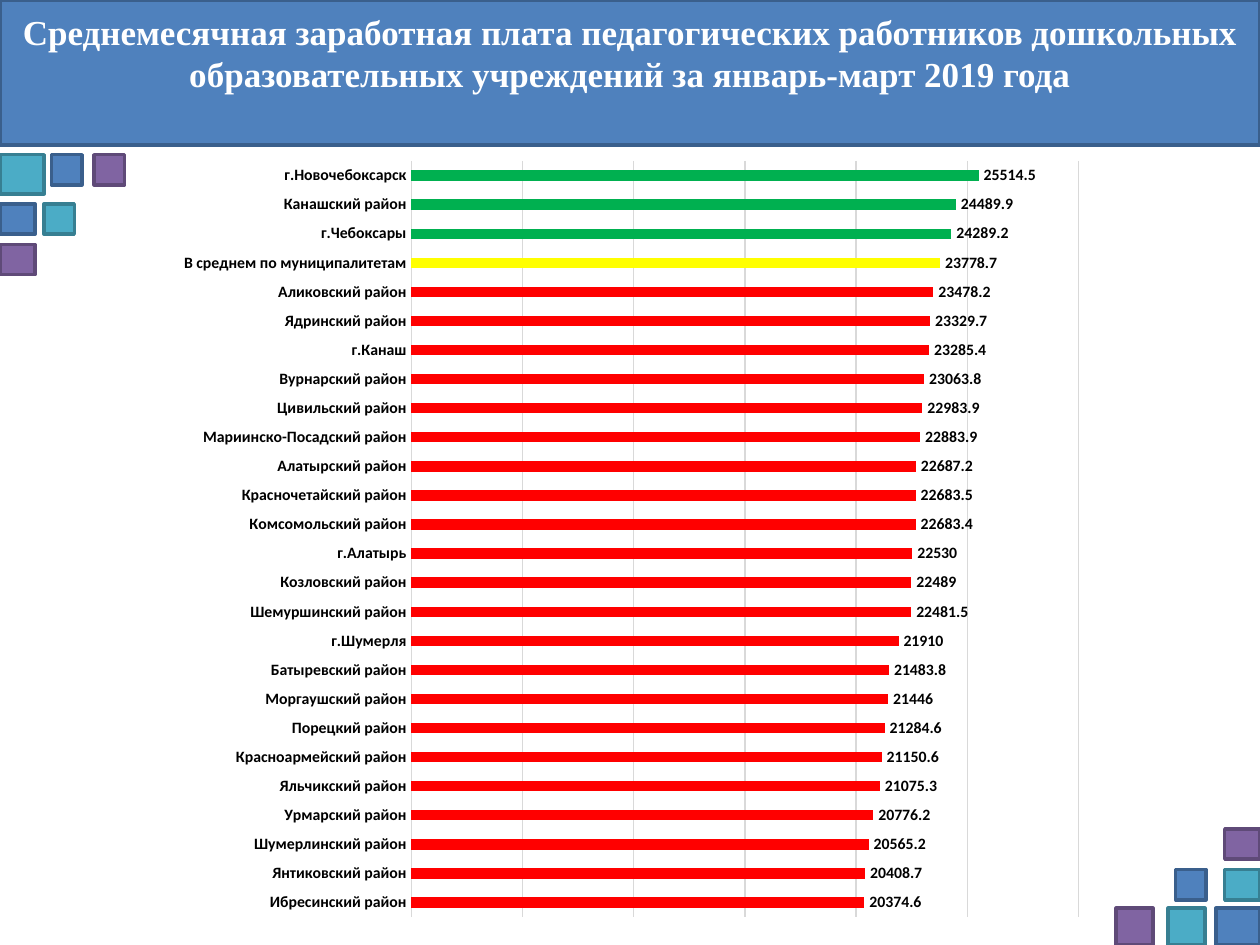
from dataclasses import dataclass

from lxml.etree import SubElement
from pptx import Presentation
from pptx.chart.data import CategoryChartData as Data
from pptx.dml.color import RGBColor as Rgb
from pptx.enum.chart import XL_CHART_TYPE as Kind
from pptx.enum.chart import XL_LABEL_POSITION as Spot
from pptx.enum.chart import XL_TICK_MARK as Tick
from pptx.enum.shapes import MSO_SHAPE as Form
from pptx.enum.text import MSO_ANCHOR as Anchor
from pptx.enum.text import PP_ALIGN as Align
from pptx.oxml.ns import qn
from pptx.util import Cm, Pt


@dataclass(frozen=True)
class Theme:
    blue: tuple = ("4F81BD", "3A5F8C")  # fill, line
    teal: tuple = ("4BACC6", "377F92")
    plum: tuple = ("8064A2", "5F4A78")
    high: str = "00B050"
    mean: str = "FFFF00"
    low: str = "FF0000"
    grid: str = "D9D9D9"
    ink: str = "000000"
    white: str = "FFFFFF"
    serif: str = "Times New Roman"
    sans: str = "Calibri"
    head: int = 20
    body: int = 10
    small: int = 9
    edge: float = 2
    thin: float = 0.75


T = Theme()

TITLE = ("Среднемесячная заработная плата педагогических работников "
         "дошкольных образовательных учреждений за январь-март 2019 года")
MEAN = "В среднем по муниципалитетам"

PAY = {
    "г.Новочебоксарск": 25514.5,
    "Канашский район": 24489.9,
    "г.Чебоксары": 24289.2,
    MEAN: 23778.7,
    "Аликовский район": 23478.2,
    "Ядринский район": 23329.7,
    "г.Канаш": 23285.4,
    "Вурнарский район": 23063.8,
    "Цивильский район": 22983.9,
    "Мариинско-Посадский район": 22883.9,
    "Алатырский район": 22687.2,
    "Красночетайский район": 22683.5,
    "Комсомольский район": 22683.4,
    "г.Алатырь": 22530,
    "Козловский район": 22489,
    "Шемуршинский район": 22481.5,
    "г.Шумерля": 21910,
    "Батыревский район": 21483.8,
    "Моргаушский район": 21446,
    "Порецкий район": 21284.6,
    "Красноармейский район": 21150.6,
    "Яльчикский район": 21075.3,
    "Урмарский район": 20776.2,
    "Шумерлинский район": 20565.2,
    "Янтиковский район": 20408.7,
    "Ибресинский район": 20374.6,
}

# Corner tiles by row: top, height, then (left, width, colour pair)
TILES = [
    (3.12, 0.61, [(1.04, 0.61, T.blue), (1.9, 0.61, T.plum)]),
    (3.12, 0.79, [(0, 0.89, T.teal)]),
    (4.11, 0.61, [(0, 0.71, T.blue), (0.89, 0.61, T.teal)]),
    (4.93, 0.61, [(0, 0.71, T.plum)]),
    (16.71, 0.61, [(24.69, 0.71, T.plum)]),
    (17.53, 0.61, [(23.7, 0.61, T.blue), (24.69, 0.71, T.teal)]),
    (18.31, 0.74, [(22.5, 0.74, T.plum), (23.55, 0.74, T.teal),
                   (24.51, 0.89, T.blue)]),
]


def tint(code):
    return Rgb.from_string(code)


def style(obj, opts):
    for key, val in opts.items():
        setattr(obj, key, val)


def type_set(font, name, size, code, bold):
    style(font, {"name": name, "size": Pt(size), "bold": bold})
    font.color.rgb = tint(code)


def stroke(line, code, width):
    line.color.rgb = tint(code)
    line.width = Pt(width)


def box(slide, left, top, width, height, pair):
    shape = slide.shapes.add_shape(
        Form.RECTANGLE, Cm(left), Cm(top), Cm(width), Cm(height))
    shape.shadow.inherit = False
    shape.fill.solid()
    shape.fill.fore_color.rgb = tint(pair[0])
    stroke(shape.line, pair[1], T.edge)
    return shape


def banner(slide):
    frame = box(slide, 0, 0, 25.4, 2.92, T.blue).text_frame
    style(frame, {"word_wrap": True, "vertical_anchor": Anchor.TOP,
                  "margin_top": Cm(0.21)})
    para = frame.paragraphs[0]
    para.alignment = Align.CENTER
    run = para.add_run()
    run.text = TITLE
    type_set(run.font, T.serif, T.head, T.white, True)


def place(chart, left, top, width, height):
    """Pin the inner plot area, in fractions of the chart."""
    area = chart.plots[0]._element.getparent()
    old = area.find(qn("c:layout"))
    if old is not None:
        area.remove(old)
    lay = SubElement(area, qn("c:layout"))
    area.insert(0, lay)
    man = SubElement(lay, qn("c:manualLayout"))
    parts = {"layoutTarget": "inner", "xMode": "edge", "yMode": "edge",
             "x": left, "y": top, "w": width, "h": height}
    for key, val in parts.items():
        SubElement(man, qn("c:" + key)).set("val", str(val))


def axes(chart):
    cat, val = chart.category_axis, chart.value_axis
    style(cat, {"reverse_order": True, "major_tick_mark": Tick.NONE,
                "minor_tick_mark": Tick.NONE, "has_major_gridlines": False})
    type_set(cat.tick_labels.font, T.sans, T.small, T.ink, True)
    stroke(cat.format.line, T.grid, T.thin)
    style(val, {"minimum_scale": 0, "maximum_scale": 30000,
                "major_unit": 5000, "has_major_gridlines": True,
                "visible": False})
    stroke(val.major_gridlines.format.line, T.grid, T.thin)


def bars(slide):
    data = Data(number_format="General")
    data.categories = list(PAY)
    data.add_series("Series 1", list(PAY.values()))
    chart = slide.shapes.add_chart(
        Kind.BAR_CLUSTERED, Cm(2.39), Cm(2.57), Cm(19.81), Cm(16.13),
        data).chart
    style(chart, {"has_legend": False, "has_title": False})
    type_set(chart.font, T.sans, T.body, T.ink, False)
    axes(chart)
    place(chart, 0.298, 0.042, 0.679, 0.945)

    # Bars are coloured by their standing against the mean
    plot = chart.plots[0]
    style(plot, {"gap_width": 182, "vary_by_categories": False,
                 "has_data_labels": True})
    row = plot.series[0]
    row.format.fill.solid()
    row.format.fill.fore_color.rgb = tint(T.blue[0])
    for num, pay in enumerate(PAY.values()):
        code = (T.high if pay > PAY[MEAN] else
                T.low if pay < PAY[MEAN] else T.mean)
        fill = row.points[num].format.fill
        fill.solid()
        fill.fore_color.rgb = tint(code)

    # Value labels
    tags = plot.data_labels
    style(tags, {"show_value": True, "position": Spot.OUTSIDE_END})
    type_set(tags.font, T.sans, T.small, T.ink, True)


def tiles(slide):
    for top, height, row in TILES:
        for left, width, pair in row:
            box(slide, left, top, width, height, pair)


def main():
    deck = Presentation()
    style(deck, {"slide_width": Cm(25.4), "slide_height": Cm(19.05)})
    slide = deck.slides.add_slide(deck.slide_layouts[6])
    banner(slide)
    bars(slide)
    tiles(slide)
    deck.save("out.pptx")


if __name__ == "__main__":
    main()
